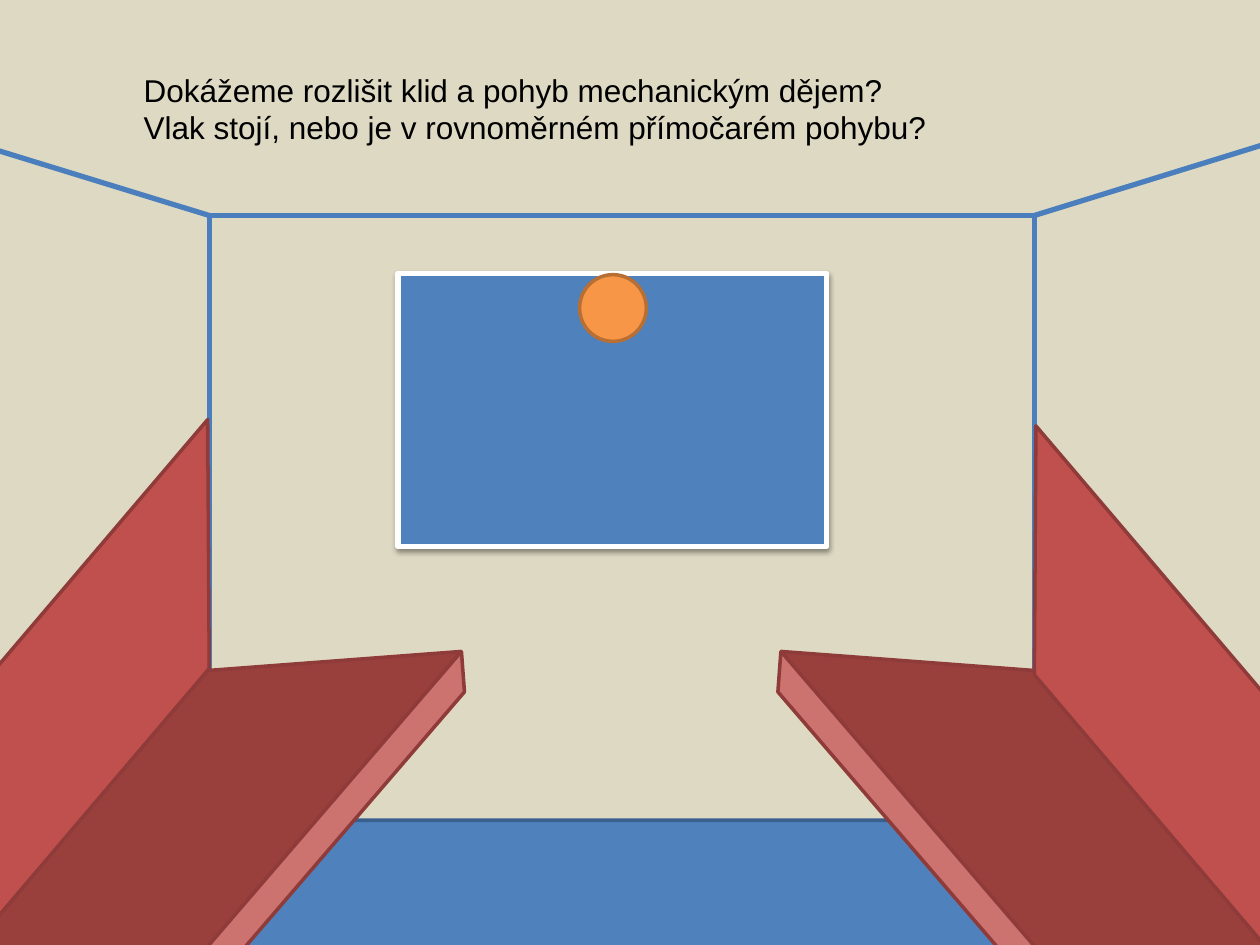
import lxml.etree
import pptx
import pptx.dml.color
import pptx.enum.shapes
import pptx.enum.text
import pptx.oxml.ns
import pptx.util

Inches, Pt = pptx.util.Inches, pptx.util.Pt
Kind = pptx.enum.shapes.MSO_SHAPE
qn = pptx.oxml.ns.qn


def rgb(code):
    return pptx.dml.color.RGBColor.from_string(code)


def draw(kind, box, fill, edge, width=2, adj=None, turn=0, flip=None):
    """Add a filled preset shape; flip is "flipH" or "flipV"."""
    shape = slide.shapes.add_shape(kind, *map(Inches, box))
    shape.shadow.inherit = False
    shape.fill.solid()
    shape.fill.fore_color.rgb = rgb(fill)
    shape.line.color.rgb = rgb(edge)
    shape.line.width = Pt(width)
    shape.rotation = turn
    if adj is not None:
        shape.adjustments[0] = adj
    if flip:
        shape._element.spPr.xfrm.set(flip, "1")
    return shape


BLUE, RED, DARK, WALL = "4F81BD", "C0504D", "8E3B39", "4B7EBC"

deck = pptx.Presentation()
deck.slide_width, deck.slide_height = Inches(10), Inches(7.5)
slide = deck.slides.add_slide(deck.slide_layouts[5])
slide.background.fill.solid()
slide.background.fill.fore_color.rgb = rgb("DDD9C3")

# Question
title = slide.shapes.title
title.left, title.top = Inches(1.04), Inches(0.51)
title.width, title.height = Inches(7.76), Inches(0.71)
frame = title.text_frame
frame.text = ("Dokážeme rozlišit klid a pohyb mechanickým dějem?\n"
              "Vlak stojí, nebo je v rovnoměrném přímočarém pohybu?")
frame.word_wrap = True
frame.auto_size = pptx.enum.text.MSO_AUTO_SIZE.NONE
frame.vertical_anchor = pptx.enum.text.MSO_ANCHOR.TOP
for para in frame.paragraphs:
    para.alignment = pptx.enum.text.PP_ALIGN.LEFT
    para.font.name = "Arial"
    para.font.size = Pt(18)
    para.font.color.rgb = rgb("000000")

# Window with a soft shadow
window = draw(Kind.ROUNDED_RECTANGLE, (3.16, 2.17, 3.4, 2.17), BLUE, "FFFFFF", 3, 0)
effects = window._element.spPr.find(qn("a:effectLst"))
shade = lxml.etree.SubElement(
    effects, qn("a:outerShdw"), blurRad=str(Pt(3.1)), dist=str(Pt(1.6)),
    dir="5400000", rotWithShape="0")
black = lxml.etree.SubElement(shade, qn("a:srgbClr"), val="000000")
lxml.etree.SubElement(black, qn("a:alpha"), val="38000")

# Floor
draw(Kind.TRAPEZOID, (-0.37, 6.51, 10.6, 3.98), BLUE, "3A5F8C", adj=0.51)

# Edges of the compartment
left, right, top, floor = 1.66, 8.21, 1.71, 6.51
edges = [
    (left, top, right, top),
    (right, top, right, floor),
    (left, top, left, floor),
    (-0.26, 1.12, left, top),
    (10.12, 1.12, right, top),
]
for ends in edges:
    edge = slide.shapes.add_connector(
        pptx.enum.shapes.MSO_CONNECTOR.STRAIGHT, *map(Inches, ends))
    edge.line.color.rgb = rgb(WALL)
    edge.line.width = Pt(3)
    lxml.etree.SubElement(edge._element.spPr, qn("a:effectLst"))

# Seats, then their backs
draw(Kind.CUBE, (6.92, 4.5, 3.22, 4.92), RED, DARK, adj=0.9, turn=274.3)
draw(Kind.CUBE, (-0.28, 4.5, 3.22, 4.92), RED, DARK, adj=0.9, turn=85.7, flip="flipH")
draw(Kind.PARALLELOGRAM, (-1.75, 4.9, 4.72, 1.29), RED, DARK, adj=1.16, turn=310.4)
draw(Kind.PARALLELOGRAM, (6.9, 4.95, 4.72, 1.29), RED, DARK, adj=1.16, turn=49.6,
     flip="flipV")

# Ball
draw(Kind.OVAL, (4.6, 2.18, 0.53, 0.53), "F79646", "B76F34")

deck.save("out.pptx")
